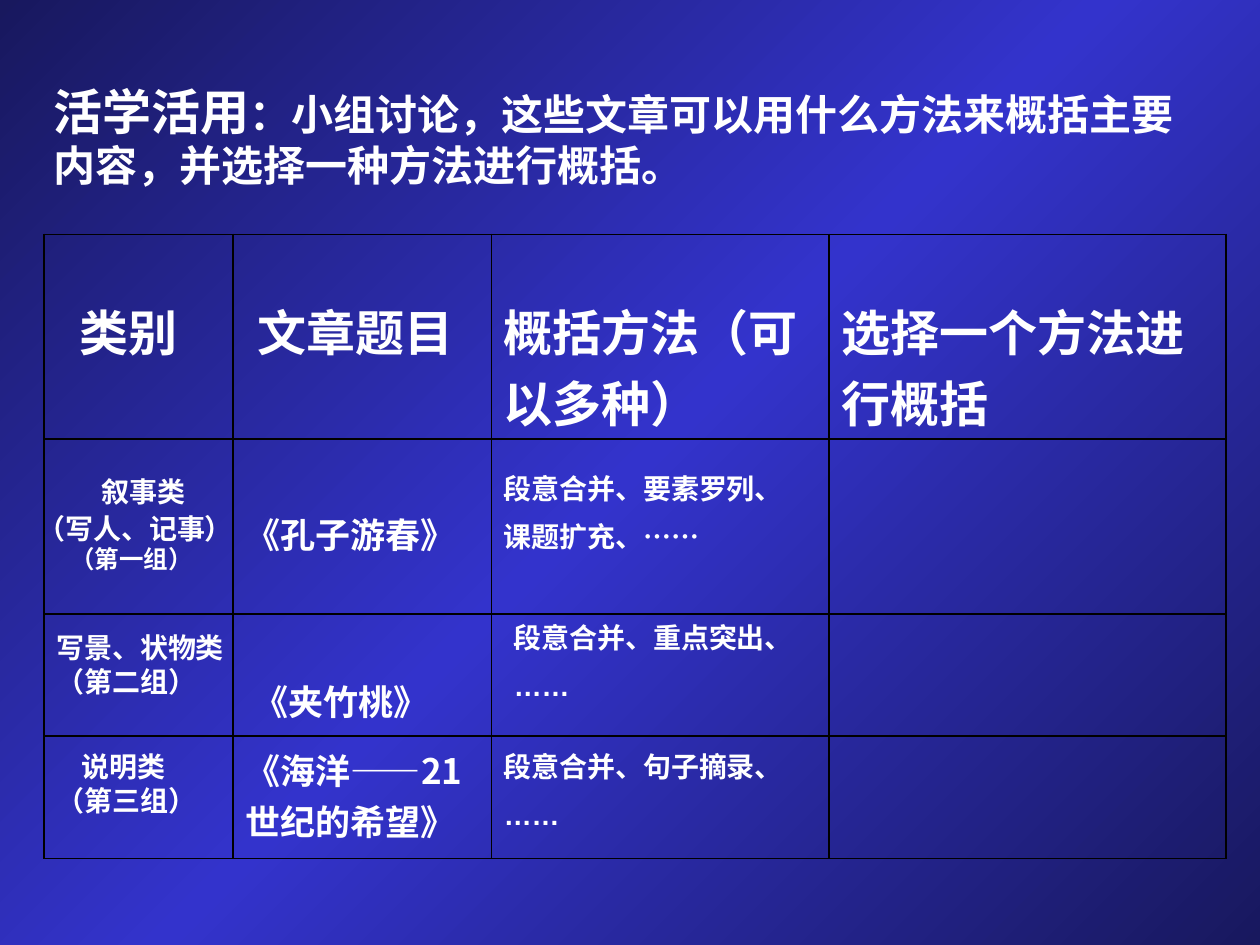
from copy import deepcopy
from dataclasses import dataclass

from lxml.etree import SubElement
from pptx import Presentation
from pptx.dml.color import RGBColor
from pptx.enum.text import MSO_ANCHOR, PP_ALIGN
from pptx.oxml.ns import qn
from pptx.util import Inches, Pt


@dataclass(frozen=True)
class Theme:
    white: str = "FFFFFF"
    border: str = "000000"
    dark: str = "18185E"
    bright: str = "3333CC"
    chinese: str = "Noto Sans CJK SC"
    latin: str = "Arial"
    title_latin: str = "Times New Roman"
    heading: float = 28
    subtitle: float = 24
    article: float = 20
    body: float = 16
    small: float = 14
    body_line: float = 19.4


@dataclass(frozen=True)
class CellText:
    row: int
    column: int
    text: str
    size: float
    top: float
    left: float = 0.1
    right: float = 0.1
    align: PP_ALIGN = PP_ALIGN.LEFT


@dataclass(frozen=True)
class Line:
    text: str
    indent: float = 0
    size: float = 16
    height: float = 19.4
    before: float = 0


@dataclass(frozen=True)
class Label:
    left: float
    top: float
    width: float
    height: float
    lines: tuple[Line, ...]


THEME = Theme()
COLUMNS = (1.5, 2.05, 2.68, 3.15)
ROWS = (1.62, 1.39, 0.97, 0.97)
CELLS = (
    CellText(0, 0, "类别", THEME.heading, 0.48, left=0.28),
    CellText(0, 1, "文章题目", THEME.heading, 0.48, right=0.21, align=PP_ALIGN.CENTER),
    CellText(0, 2, "概括方法（可以多种）", THEME.heading, 0.48),
    CellText(0, 3, "选择一个方法进行概括", THEME.heading, 0.48),
    CellText(1, 1, "《孔子游春》", THEME.article, 0.55),
    CellText(2, 1, "《夹竹桃》", THEME.article, 0.48, left=0.16),
    CellText(3, 1, "《海洋——21世纪的希望》", THEME.article, 0.06),
)


def methods(left: float, top: float, first: str, second: str) -> Label:
    return Label(left, top, 2.8, 0.77, (Line(first), Line(second, before=8)))


LABELS = (
    Label(0.2, 3.59, 1.81, 0.9, (
        Line("叙事类", indent=0.51, height=28.4),
        Line("（写人、记事）", height=21),
        Line("（第一组）", indent=0.26, size=THEME.small, height=16.4),
    )),
    Label(0.35, 4.95, 1.57, 0.64, (Line("写景、状物类"), Line("（第二组）"))),
    Label(0.35, 5.9, 1.65, 0.64, (Line("说明类", indent=0.2), Line("（第三组）"))),
    methods(3.9, 3.69, "段意合并、要素罗列、", "课题扩充、……"),
    methods(3.98, 4.87, "段意合并、重点突出、", "……"),
    methods(3.9, 5.9, "段意合并、句子摘录、", "……"),
)


def add_span(para, text: str, *, size: float, latin: str = THEME.chinese) -> None:
    span = para.add_run()
    span.text = text
    span.font.size = Pt(size)
    span.font.bold = True
    span.font.color.rgb = RGBColor.from_string(THEME.white)
    span.font.name = latin
    SubElement(span.font._element, qn("a:ea"), typeface=THEME.chinese)


def add_frame(page, left: float, top: float, width: float, height: float):
    box = page.shapes.add_textbox(Inches(left), Inches(top), Inches(width), Inches(height))
    box.text_frame.word_wrap = True
    return box.text_frame


def paint_background(page) -> None:
    fill = page.background.fill
    fill.gradient()
    fill.gradient_angle = 315
    stops = page.element.find(".//" + qn("a:gsLst"))
    stops.append(deepcopy(stops[-1]))
    colors = (THEME.dark, THEME.bright, THEME.dark)
    for stop, color, position in zip(fill.gradient_stops, colors, (0, 0.5, 1)):
        stop.color.rgb = RGBColor.from_string(color)
        stop.position = position


def add_title(page) -> None:
    frame = add_frame(page, 0.33, 0.75, 9.34, 0.72)
    frame.vertical_anchor = MSO_ANCHOR.MIDDLE
    para = frame.paragraphs[0]
    para.line_spacing = Pt(28.8)
    add_span(para, "活学活用", size=THEME.heading, latin=THEME.title_latin)
    add_span(
        para,
        "：小组讨论，这些文章可以用什么方法来概括主要内容，并选择一种方法进行概括。",
        size=THEME.subtitle,
        latin=THEME.title_latin,
    )


def outline_cell(cell) -> None:
    properties = cell._tc.get_or_add_tcPr()
    for side in ("lnL", "lnR", "lnT", "lnB"):
        line = SubElement(properties, qn(f"a:{side}"), w=str(Pt(1)))
        fill = SubElement(line, qn("a:solidFill"))
        SubElement(fill, qn("a:srgbClr"), val=THEME.border)
    cell.fill.background()


def add_grid(page) -> None:
    table = page.shapes.add_table(
        len(ROWS), len(COLUMNS), Inches(0.35), Inches(1.86),
        Inches(sum(COLUMNS)), Inches(sum(ROWS)),
    ).table
    table.first_row = False
    table.horz_banding = False
    for column, width in zip(table.columns, COLUMNS):
        column.width = Inches(width)
    for row, height in zip(table.rows, ROWS):
        row.height = Inches(height)
    for cell in table.iter_cells():
        outline_cell(cell)
    for item in CELLS:
        cell = table.cell(item.row, item.column)
        cell.margin_left = Inches(item.left)
        cell.margin_right = Inches(item.right)
        cell.margin_top = Inches(item.top)
        cell.margin_bottom = Inches(0.02)
        para = cell.text_frame.paragraphs[0]
        para.alignment = item.align
        add_span(para, item.text, size=item.size)


def add_label(page, label: Label) -> None:
    frame = add_frame(page, label.left, label.top, label.width, label.height)
    for index, line in enumerate(label.lines):
        para = frame.add_paragraph() if index else frame.paragraphs[0]
        para.line_spacing = Pt(line.height)
        if line.before:
            para.space_before = Pt(line.before)
        if line.indent:
            properties = para._p.get_or_add_pPr()
            properties.set("marL", str(Inches(line.indent)))
            properties.set("indent", "0")
        add_span(para, line.text, size=line.size, latin=THEME.latin)


def main() -> None:
    deck = Presentation()
    deck.slide_width, deck.slide_height = Inches(10), Inches(7.5)
    page = deck.slides.add_slide(deck.slide_layouts[6])
    paint_background(page)
    add_grid(page)
    add_title(page)
    for label in LABELS:
        add_label(page, label)
    deck.save("out.pptx")


if __name__ == "__main__":
    main()
